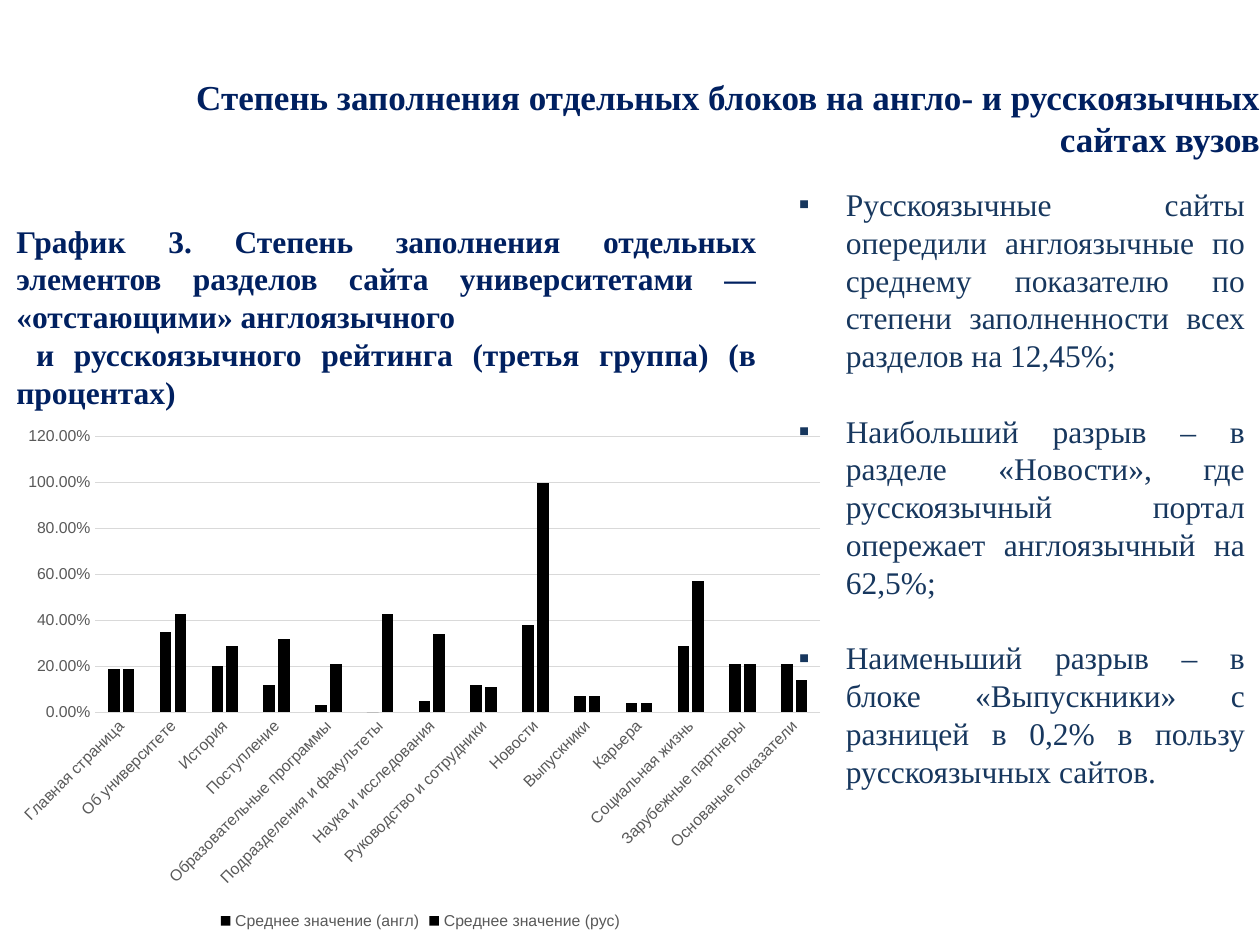
"""Build a slide comparing how complete university site sections are in English and Russian."""
from lxml import etree
from pptx import Presentation
from pptx.chart.data import CategoryChartData
from pptx.dml.color import RGBColor
from pptx.enum.chart import XL_CHART_TYPE, XL_LEGEND_POSITION, XL_TICK_MARK
from pptx.enum.text import MSO_ANCHOR, MSO_AUTO_SIZE, PP_ALIGN
from pptx.oxml.ns import qn
from pptx.util import Cm, Pt

COLUMNS = XL_CHART_TYPE.COLUMN_CLUSTERED
BOTTOM = XL_LEGEND_POSITION.BOTTOM
NO_TICK = XL_TICK_MARK.NONE
TOP, MIDDLE = MSO_ANCHOR.TOP, MSO_ANCHOR.MIDDLE
NO_FIT = MSO_AUTO_SIZE.NONE
RIGHT, JUSTIFY = PP_ALIGN.RIGHT, PP_ALIGN.JUSTIFY
COLORS = {"navy": "002060", "body": "17375E", "label": "595959",
          "grid": "D9D9D9", "bar": "000000"}


def style_font(font, name, size, color, bold=False):
    font.name, font.size, font.bold = name, Pt(size), bold
    font.color.rgb = RGBColor.from_string(COLORS[color])


def place(sp, left, top, width, height):
    sp.left, sp.top, sp.width, sp.height = Cm(left), Cm(top), Cm(width), Cm(height)
    tf = sp.text_frame
    tf.word_wrap = True
    tf.auto_size = NO_FIT
    tf.vertical_anchor = TOP
    tf.margin_left = tf.margin_top = tf.margin_right = tf.margin_bottom = 0
    return tf


prs = Presentation()
prs.slide_width, prs.slide_height = Cm(25.4), Cm(19.05)
s = prs.slides.add_slide(prs.slide_layouts[1])

tf = place(s.shapes.title, 2.97, 1.52, 22.43, 2.21)
p = tf.paragraphs[0]
p.alignment = RIGHT
r = p.add_run()
r.text = "Степень заполнения отдельных блоков на англо- и русскоязычных сайтах вузов"
style_font(r.font, "Times New Roman", 20, "navy", True)

findings = [
    "Русскоязычные сайты опередили англоязычные по среднему показателю по степени "
    "заполненности всех разделов на 12,45%;",
    "Наибольший разрыв – в разделе «Новости», где русскоязычный портал опережает "
    "англоязычный на 62,5%;",
    "Наименьший разрыв – в блоке «Выпускники» с разницей в 0,2% в пользу "
    "русскоязычных сайтов.",
]
tf = place(s.placeholders[1], 16.1, 3.73, 9, 15)
for i, text in enumerate(findings):
    p = tf.paragraphs[0] if i == 0 else tf.add_paragraph()
    pPr = p._p.get_or_add_pPr()
    pPr.set("marL", str(Cm(0.95)))
    pPr.set("indent", str(Cm(-0.95)))
    etree.SubElement(pPr, qn("a:buFont")).set("typeface", "Arial")
    etree.SubElement(pPr, qn("a:buChar")).set("char", "▪")
    p.alignment = JUSTIFY
    p.space_before = Pt(21.5 if i else 0)
    r = p.add_run()
    r.text = text
    style_font(r.font, "Times New Roman", 18, "body")

caption = [
    ("График 3. Степень заполнения отдельных элементов разделов сайта "
     "университетами — «отстающими» англоязычного", 0),
    ("и русскоязычного рейтинга (третья группа) (в процентах)", 0.4),
]
sp = s.shapes.add_textbox(0, 0, Cm(1), Cm(1))
tf = place(sp, 0.08, 4.32, 15.42, 4.11)
tf.vertical_anchor = MIDDLE
tf.margin_left = tf.margin_right = Cm(0.25)
for i, (text, indent) in enumerate(caption):
    p = tf.paragraphs[0] if i == 0 else tf.add_paragraph()
    p.alignment = JUSTIFY
    p._p.get_or_add_pPr().set("indent", str(Cm(indent)))
    r = p.add_run()
    r.text = text
    style_font(r.font, "Times New Roman", 18, "navy", True)

data = CategoryChartData(number_format="0.00%")
data.categories = [
    "Главная страница", "Об университете", "История", "Поступление",
    "Образовательные программы", "Подразделения и факультеты",
    "Наука и исследования", "Руководство и сотрудники", "Новости", "Выпускники",
    "Карьера", "Социальная жизнь", "Зарубежные партнеры", "Основаные показатели",
]
data.add_series("Среднее значение (англ)", [
    0.19, 0.35, 0.2, 0.12, 0.03, 0, 0.05, 0.12, 0.38, 0.07, 0.04, 0.29, 0.21, 0.21])
data.add_series("Среднее значение (рус)", [
    0.19, 0.43, 0.29, 0.32, 0.21, 0.43, 0.34, 0.11, 1, 0.07, 0.04, 0.57, 0.21, 0.14])
chart = s.shapes.add_chart(
    COLUMNS, Cm(0.08), Cm(8.41), Cm(16.79), Cm(10.44), data).chart
chart.has_title = False
style_font(chart.font, "Arial", 10, "bar")
chart.has_legend = True
chart.legend.position = BOTTOM
chart.legend.include_in_layout = False
style_font(chart.legend.font, "Arial", 9, "label")

plot = chart.plots[0]
plot.vary_by_categories = False
plot.gap_width, plot.overlap = 219, -27
for series in plot.series:
    series.format.fill.solid()
    series.format.fill.fore_color.rgb = RGBColor.from_string(COLORS["bar"])

cat_axis, val_axis = chart.category_axis, chart.value_axis
for axis in (cat_axis, val_axis):
    axis.major_tick_mark = axis.minor_tick_mark = NO_TICK
    style_font(axis.tick_labels.font, "Arial", 9, "label")
val_axis.has_major_gridlines = True
for line in (cat_axis.format.line, val_axis.major_gridlines.format.line):
    line.width = Pt(0.75)
    line.color.rgb = RGBColor.from_string(COLORS["grid"])
val_axis.format.line.fill.background()
val_axis.minimum_scale, val_axis.maximum_scale, val_axis.major_unit = 0, 1.2, 0.2
val_axis.tick_labels.number_format = "0.00%"
val_axis.tick_labels.number_format_is_linked = False
cat_axis._element.find(qn("c:txPr")).find(qn("a:bodyPr")).set("rot", "-2700000")

prs.save("out.pptx")
